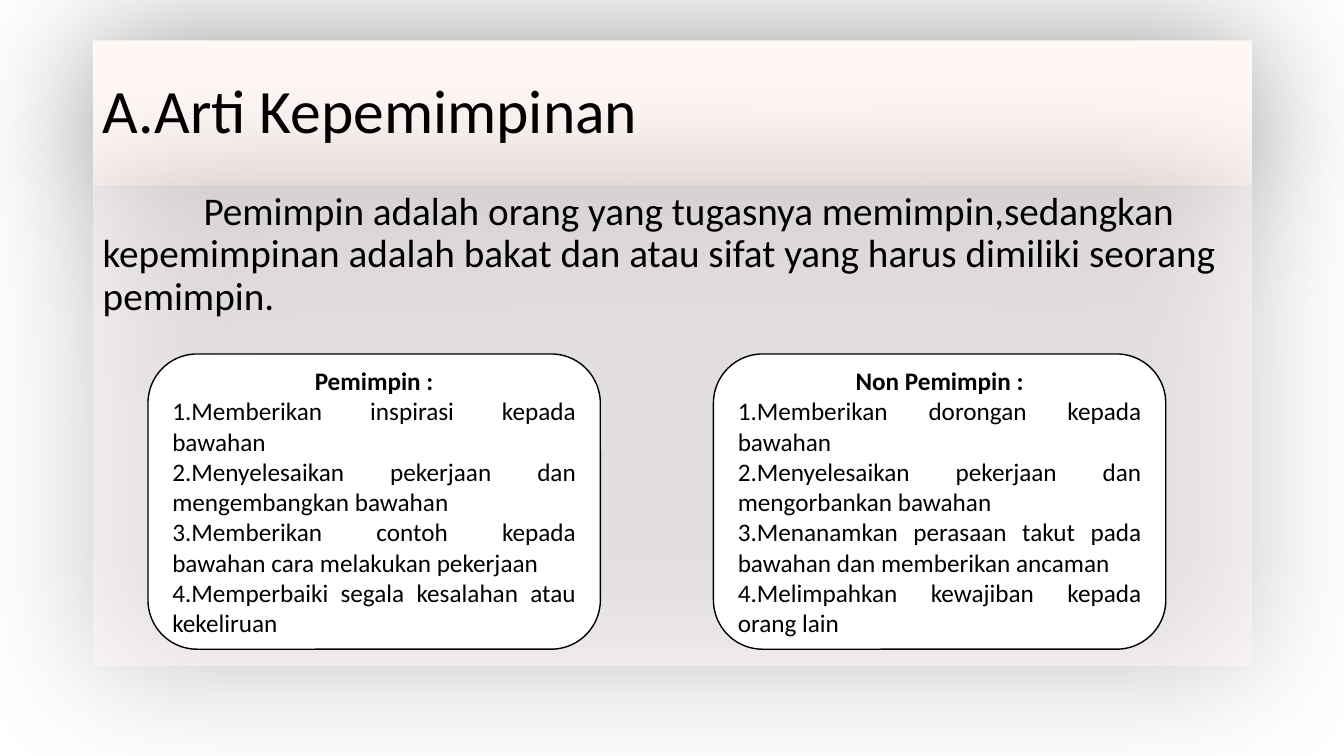
from lxml.etree import SubElement
from pptx import Presentation
from pptx.dml.color import RGBColor
from pptx.enum.shapes import MSO_SHAPE
from pptx.enum.text import MSO_ANCHOR, PP_ALIGN
from pptx.oxml.ns import qn
from pptx.util import Cm, Pt

COLORS = {"ink": "000000", "blush": "FFF7F5", "card": "FFFFFF"}
LEFT, WIDTH = 2.34, 29.21
CARDS = [
    ("Pemimpin :", [
        "1.Memberikan inspirasi kepada bawahan",
        "2.Menyelesaikan pekerjaan dan mengembangkan bawahan",
        "3.Memberikan contoh kepada bawahan cara melakukan pekerjaan",
        "4.Memperbaiki segala kesalahan atau kekeliruan",
    ]),
    ("Non Pemimpin :", [
        "1.Memberikan dorongan kepada bawahan",
        "2.Menyelesaikan pekerjaan dan mengorbankan bawahan",
        "3.Menanamkan perasaan takut pada bawahan dan memberikan ancaman",
        "4.Melimpahkan kewajiban kepada orang lain",
    ]),
]


def color(name):
    return RGBColor.from_string(COLORS[name])


def add_box(slide, kind, box, fill, anchor=MSO_ANCHOR.MIDDLE):
    shape = slide.shapes.add_shape(kind, *[Cm(n) for n in box])
    shape.shadow.inherit = False
    shape.fill.solid()
    shape.fill.fore_color.rgb = color(fill)
    shape.line.fill.background()
    shape.text_frame.word_wrap = True
    shape.text_frame.vertical_anchor = anchor
    return shape


def set_alpha(node, percent):
    SubElement(node, qn("a:alpha"), val=str(percent * 1000))


def add_panel(slide, top, height, anchor, alpha=100):
    """Add a full-width panel with a wide soft shadow."""
    box = (LEFT, top, WIDTH, height)
    shape = add_box(slide, MSO_SHAPE.RECTANGLE, box, "blush", anchor)
    props = shape.element.spPr
    if alpha < 100:
        set_alpha(props.find(".//" + qn("a:srgbClr")), alpha)
    glow = SubElement(props.find(qn("a:effectLst")), qn("a:outerShdw"),
                      blurRad=str(Pt(100)), dist=str(Pt(4)),
                      dir="5400000", algn="t", rotWithShape="0")
    set_alpha(SubElement(glow, qn("a:srgbClr"), val=COLORS["ink"]), 43)
    return shape


def write(shape, text, size=18, bold=False, align=PP_ALIGN.LEFT,
          space=None, indent=0, first=True):
    frame = shape.text_frame
    para = frame.paragraphs[0] if first else frame.add_paragraph()
    para.alignment = align
    if space:
        para.line_spacing = space
    if indent:
        para._p.get_or_add_pPr().set("indent", str(Cm(indent)))
    run = para.add_run()
    run.text = text
    run.font.name = "Calibri"
    run.font.size = Pt(size)
    run.font.bold = bold
    run.font.color.rgb = color("ink")


def add_card(slide, left, title, points):
    box = (left, 8.92, 11.4, 7.44)
    card = add_box(slide, MSO_SHAPE.ROUNDED_RECTANGLE, box, "card")
    card.line.color.rgb = color("ink")
    card.line.width = Pt(1)
    write(card, title, bold=True, align=PP_ALIGN.CENTER)
    for point in points:
        write(card, point, align=PP_ALIGN.JUSTIFY, first=False)


def main():
    deck = Presentation()
    deck.slide_width, deck.slide_height = Cm(33.87), Cm(19.05)
    slide = deck.slides.add_slide(deck.slide_layouts[6])

    title = add_panel(slide, 1.02, 3.68, MSO_ANCHOR.MIDDLE)
    write(title, "A.Arti Kepemimpinan", size=44, space=0.9)
    body = add_panel(slide, 4.7, 12.09, MSO_ANCHOR.TOP, alpha=50)
    write(body, "Pemimpin adalah orang yang tugasnya memimpin,sedangkan "
          "kepemimpinan adalah bakat dan atau sifat yang harus dimiliki "
          "seorang pemimpin.", size=28, space=0.9, indent=2.54)

    for index, (head, points) in enumerate(CARDS):
        add_card(slide, 3.73 + index * 14.25, head, points)
    deck.save("out.pptx")


if __name__ == "__main__":
    main()
